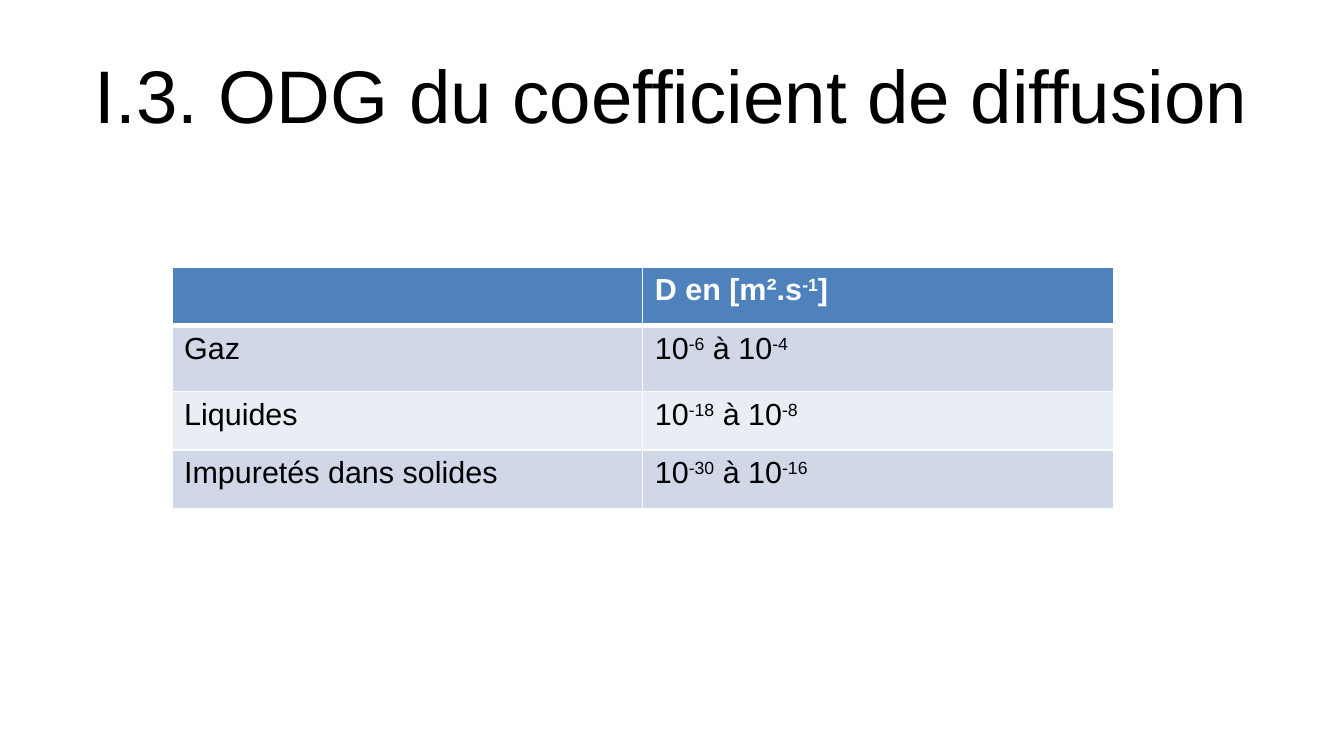
import pptx
import pptx.dml.color
import pptx.enum.text
import pptx.oxml
import pptx.oxml.ns
import pptx.util
from dataclasses import dataclass

Inches = pptx.util.Inches


@dataclass(frozen=True)
class Theme:
    font: str = "Arial"
    dark: str = "000000"
    light: str = "FFFFFF"
    head: str = "4F81BD"
    bands: tuple = ("D0D8E8", "E9EDF4")
    title: int = 44
    body: int = 18
    thin: int = 1
    thick: int = 3


class Deck:
    def __init__(self, theme, width, height):
        self.theme = theme
        self.show = pptx.Presentation()
        self.show.slide_width = Inches(width)
        self.show.slide_height = Inches(height)
        self.slide = self.show.slides.add_slide(self.show.slide_layouts[5])

    def label(self, para, text, size, color, bold=False):
        for i, part in enumerate(text.split("^")):
            if not part:
                continue
            run = para.add_run()
            run.text = part
            font = run.font
            font.name = self.theme.font
            font.size = pptx.util.Pt(size)
            font.bold = bold
            font.color.rgb = pptx.dml.color.RGBColor.from_string(color)
            if i % 2:
                run._r.get_or_add_rPr().set("baseline", "30000")

    def title(self, text, left, top, width, height):
        shape = self.slide.shapes.title
        shape.left, shape.top = Inches(left), Inches(top)
        shape.width, shape.height = Inches(width), Inches(height)
        frame = shape.text_frame
        frame.word_wrap = True
        frame.auto_size = pptx.enum.text.MSO_AUTO_SIZE.NONE
        frame.vertical_anchor = pptx.enum.text.MSO_ANCHOR.MIDDLE
        para = frame.paragraphs[0]
        para.alignment = pptx.enum.text.PP_ALIGN.CENTER
        self.label(para, text, self.theme.title, self.theme.dark)

    def border(self, cell, row):
        props = cell._tc.get_or_add_tcPr()
        widths = dict.fromkeys("LRTB", self.theme.thin)
        if row < 2:
            widths["B" if row == 0 else "T"] = self.theme.thick
        for i, (side, width) in enumerate(widths.items()):
            line = pptx.oxml.parse_xml(
                f'<a:ln{side} {pptx.oxml.ns.nsdecls("a")} w="{pptx.util.Pt(width)}">'
                f'<a:solidFill><a:srgbClr val="{self.theme.light}"/></a:solidFill>'
                f'</a:ln{side}>'
            )
            props.insert(i, line)

    def table(self, data, left, top, widths, heights):
        theme = self.theme
        frame = self.slide.shapes.add_table(
            len(data), len(widths), Inches(left), Inches(top),
            Inches(sum(widths)), Inches(sum(heights)))
        grid = frame.table
        for col, width in zip(grid.columns, widths):
            col.width = Inches(width)
        for i, (texts, height) in enumerate(zip(data, heights)):
            grid.rows[i].height = Inches(height)
            head = i == 0
            fill = theme.head if head else theme.bands[(i - 1) % 2]
            color = theme.light if head else theme.dark
            for j, text in enumerate(texts):
                cell = grid.cell(i, j)
                cell.fill.solid()
                cell.fill.fore_color.rgb = pptx.dml.color.RGBColor.from_string(fill)
                self.border(cell, i)
                para = cell.text_frame.paragraphs[0]
                self.label(para, text, theme.body, color, head)


def main():
    deck = Deck(Theme(), 11.02, 6.2)
    deck.title("I.3. ODG du coefficient de diffusion", 0.55, 0.25, 9.92, 1.03)
    data = [
        ("", "D en [m².s^-1^]"),
        ("Gaz", "10^-6^ à 10^-4"),
        ("Liquides ", "10^-18^ à 10^-8"),
        ("Impuretés dans solides", "10^-30^ à 10^-16"),
    ]
    deck.table(data, 1.41, 2.19, [3.86] * 2, [0.48, 0.54, 0.48, 0.48])
    deck.show.save("out.pptx")


if __name__ == "__main__":
    main()
